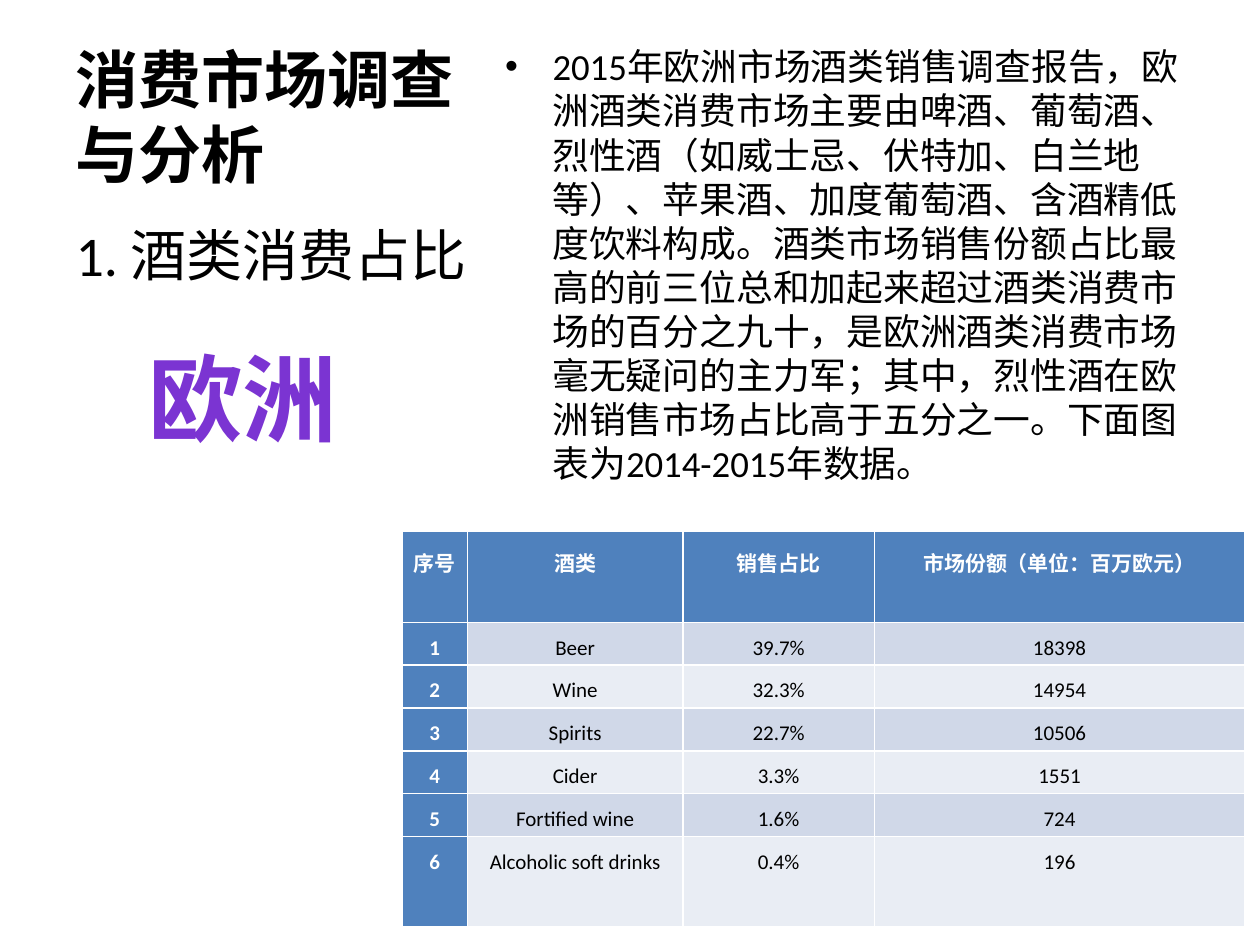
from lxml.etree import SubElement
from pptx import Presentation
from pptx.dml.color import RGBColor
from pptx.enum.text import MSO_ANCHOR, MSO_AUTO_SIZE, PP_ALIGN
from pptx.oxml import parse_xml
from pptx.oxml.ns import nsdecls, qn
from pptx.util import Inches, Pt

BLACK = RGBColor(0x00, 0x00, 0x00)
WHITE = RGBColor(0xFF, 0xFF, 0xFF)
BLUE = RGBColor(0x4F, 0x81, 0xBD)
BAND_DARK = RGBColor(0xD0, 0xD8, 0xE8)
BAND_LIGHT = RGBColor(0xE9, 0xED, 0xF4)
PURPLE_DARK = RGBColor(0x3D, 0x1B, 0x67)
PURPLE = RGBColor(0x7B, 0x34, 0xD2)
PURPLE_MID = RGBColor(0x73, 0x30, 0xC4)
PURPLE_EDGE = RGBColor(0x5E, 0x45, 0x7C)

REPORT = (
    "2015年欧洲市场酒类销售调查报告，欧洲酒类消费市场主要由啤酒、葡萄酒、"
    "烈性酒（如威士忌、伏特加、白兰地等）、苹果酒、加度葡萄酒、含酒精低度饮料构成。"
    "酒类市场销售份额占比最高的前三位总和加起来超过酒类消费市场的百分之九十，"
    "是欧洲酒类消费市场毫无疑问的主力军；其中，烈性酒在欧洲销售市场占比高于五分之一。"
    "下面图表为2014-2015年数据。"
)
SALES = [
    ("序号", "酒类", "销售占比", "市场份额（单位：百万欧元）"),
    ("1", "Beer", "39.7%", "18398"),
    ("2", "Wine", "32.3%", "14954"),
    ("3", "Spirits", "22.7%", "10506"),
    ("4", "Cider", "3.3%", "1551"),
    ("5", "Fortified wine", "1.6%", "724"),
    ("6", "Alcoholic soft drinks", "0.4%", "196"),
]


def write(frame, text, size, color=BLACK, bold=False, align=None, spacing=None):
    paragraph = frame.paragraphs[0]
    paragraph.alignment = align
    paragraph.line_spacing = spacing
    run = paragraph.add_run()
    run.text = text
    run.font.name = "Calibri"
    run.font.size = Pt(size)
    run.font.bold = bold
    run.font.color.rgb = color
    return run


def add_gradient_outline(run, stops, edge, width):
    """Replace the run's solid fill by a vertical gradient with an outline."""
    properties = run.font._element
    properties.remove(properties.find(qn("a:solidFill")))
    gradient = parse_xml(
        f'<a:gradFill {nsdecls("a")}><a:gsLst/><a:lin ang="5400000"/></a:gradFill>')
    for percent, color in stops:
        stop = SubElement(gradient[0], qn("a:gs"), pos=str(percent * 1000))
        SubElement(stop, qn("a:srgbClr"), val=str(color))
    outline = parse_xml(
        f'<a:ln {nsdecls("a")} w="{Pt(width)}"><a:solidFill>'
        f'<a:srgbClr val="{edge}"/></a:solidFill></a:ln>')
    properties.insert(0, outline)
    properties.insert(1, gradient)


class SlideBuilder:
    def __init__(self, slide):
        self.slide = slide

    def placeholder(self, index, text, box, size, **style):
        holder = self.slide.placeholders[index]
        holder.left, holder.top, holder.width, holder.height = map(Inches, box)
        frame = holder.text_frame
        frame.auto_size = MSO_AUTO_SIZE.NONE
        write(frame, text, size, **style)

    def word_art(self, text, box, size):
        frame = self.slide.shapes.add_textbox(*map(Inches, box)).text_frame
        frame.word_wrap = True
        frame.auto_size = MSO_AUTO_SIZE.SHAPE_TO_FIT_TEXT
        run = write(frame, text, size, PURPLE, bold=True, align=PP_ALIGN.CENTER)
        stops = [(0, PURPLE_DARK), (43, PURPLE), (48, PURPLE_MID), (100, PURPLE_DARK)]
        add_gradient_outline(run, stops, PURPLE_EDGE, 0.71)

    def table(self, rows, left, top, widths, heights):
        table = self.slide.shapes.add_table(
            len(rows), len(widths), Inches(left), Inches(top),
            Inches(sum(widths)), Inches(sum(heights))).table
        table.first_col = True
        for column, width in zip(table.columns, widths):
            column.width = Inches(width)
        for row, height in zip(table.rows, heights):
            row.height = Inches(height)
        for r, values in enumerate(rows):
            for c, value in enumerate(values):
                heading = r == 0 or c == 0
                band = BAND_DARK if r % 2 else BAND_LIGHT
                self.cell(table.cell(r, c), value, BLUE if heading else band, heading)

    def cell(self, cell, text, fill, heading):
        cell.fill.solid()
        cell.fill.fore_color.rgb = fill
        cell.margin_left = cell.margin_right = Inches(0.07)
        cell.margin_top = cell.margin_bottom = 0
        cell.vertical_anchor = MSO_ANCHOR.TOP
        write(cell.text_frame, text, 12, WHITE if heading else BLACK,
              bold=heading, align=PP_ALIGN.CENTER, spacing=1.5)


def main():
    deck = Presentation()
    deck.slide_width, deck.slide_height = Inches(10), Inches(7.5)
    caption_layout = deck.slide_layouts[7]
    builder = SlideBuilder(deck.slides.add_slide(caption_layout))
    builder.placeholder(0, "消费市场调查与分析", (0.5, 0.3, 3.29, 1.27), 36, bold=True)
    builder.placeholder(1, REPORT, (3.91, 0.3, 5.59, 6.4), 21)
    builder.placeholder(2, "1. 酒类消费占比", (0.5, 1.7, 3.71, 5), 32)
    builder.table(SALES, 3.19, 4.22, [0.52, 1.71, 1.52, 2.94],
                  [0.72] + [0.34] * 5 + [0.72])
    builder.word_art("欧洲", (0.43, 2.65, 2.99, 1.01), 54)
    deck.save("out.pptx")


if __name__ == "__main__":
    main()
